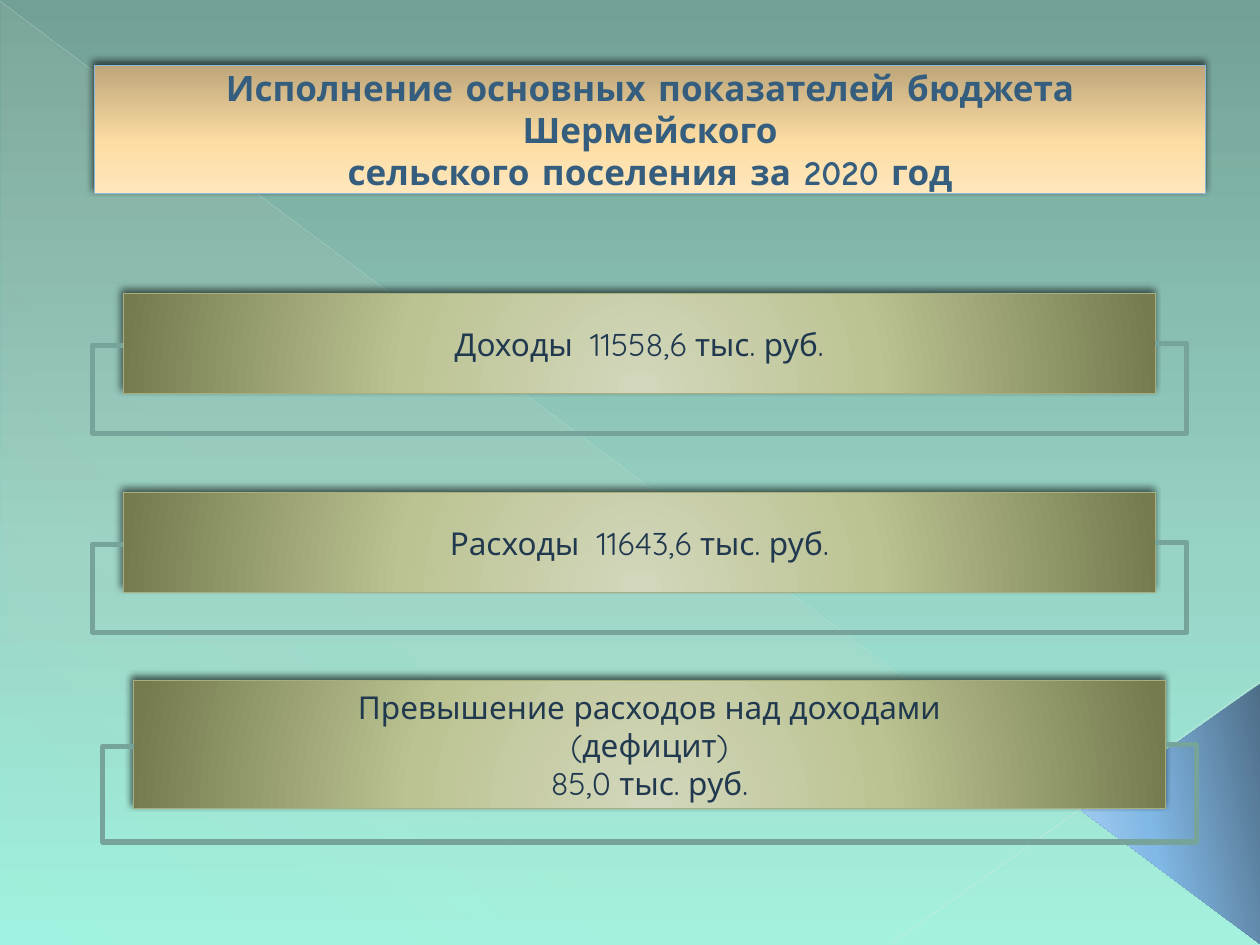
from lxml import etree
from pptx import Presentation
from pptx.dml.color import RGBColor
from pptx.enum import shapes, text
from pptx.oxml import ns
from pptx.util import Pt

COLORS = {
    "title": "355D7E", "title_line": "8EB7D8",
    "text": "21394F", "bar_line": "A8AF7D", "bracket": "76A49A",
    "ray": "D2EAE4", "short_ray": "D6ECE7", "shadow": "000000",
}
# Gradient stops: position %, colour, opacity %
GRADIENTS = {
    "background": [(0, "72A096", 100), (60, "98D4C6", 100), (100, "9EF3E0", 100)],
    "veil": [(0, "EBDDC3", 10), (70, "EBDDC3", 8), (100, "EBDDC3", 1)],
    "corner": [(0, "4E6D87", 100), (60, "81B8E5", 100), (100, "ABD0F3", 100)],
    "title": [(0, "BEA67B", 100), (60, "FCDDA3", 100), (100, "FFE7BD", 100)],
    "bar": [(0, "D3D7BC", 100), (46, "BCC392", 100), (100, "757B4E", 100)],
}
TITLE = ["Исполнение основных показателей бюджета Шермейского",
         "сельского поселения за 2020 год"]
# Box (left, top, width, height), drop of the bracket, lines of text
BARS = [
    ((70.5, 167.8, 589.7, 56.9), 50.7, ["Доходы  11558,6 тыс. руб."]),
    ((70.5, 281.5, 589.7, 56.9), 50.7, ["Расходы  11643,6 тыс. руб."]),
    ((76.3, 388.8, 589.7, 73.4), 55.1,
     ["Превышение расходов над доходами", "(дефицит)", "85,0 тыс. руб."]),
]


def child(parent, tag, **attrs):
    return etree.SubElement(parent, ns.qn(tag), {k: str(v) for k, v in attrs.items()})


def add_color(parent, color, opacity):
    clr = child(parent, "a:srgbClr", val=color)
    if opacity < 100:
        child(clr, "a:alpha", val=opacity * 1000)


def set_gradient(fill, element, name, angle=None):
    """Fill with a linear gradient, or a circular one when there is no angle."""
    fill.gradient()
    grad = element.find(".//" + ns.qn("a:gradFill"))
    for old in list(grad):
        grad.remove(old)
    stops = child(grad, "a:gsLst")
    for pos, color, opacity in GRADIENTS[name]:
        add_color(child(stops, "a:gs", pos=pos * 1000), color, opacity)
    if angle is None:
        circle = child(grad, "a:path", path="circle")
        child(circle, "a:fillToRect", l=50000, t=155000, r=50000, b=-55000)
    else:
        child(grad, "a:lin", ang=angle * 60000, scaled=0)


def set_line(sp, color, width):
    sp.line.color.rgb = RGBColor.from_string(COLORS[color])
    sp.line.width = Pt(width)


def add_shadow(sp):
    sp.shadow.inherit = False
    effects = sp._element.spPr.find(ns.qn("a:effectLst"))
    shadow = child(effects, "a:outerShdw", blurRad=Pt(4), dist=Pt(3),
                   dir=245 * 60000, algn="tl", rotWithShape=0)
    add_color(shadow, COLORS["shadow"], 60)


def write_lines(sp, lines, font, size, color, bold=False):
    tf = sp.text_frame
    tf.word_wrap = True
    tf.auto_size = text.MSO_AUTO_SIZE.NONE
    tf.vertical_anchor = text.MSO_ANCHOR.MIDDLE
    tf.text = "\n".join(lines)
    for p in tf.paragraphs:
        p.alignment = text.PP_ALIGN.CENTER
        p.font.name = font
        p.font.size = Pt(size)
        p.font.bold = bold
        p.font.color.rgb = RGBColor.from_string(COLORS[color])


def add_line(s, kind, points, color, width):
    cxn = s.shapes.add_connector(kind, *[Pt(v) for v in points])
    set_line(cxn, color, width)
    child(cxn._element.spPr, "a:effectLst")
    return cxn


def add_decor(s, width, height):
    """Background gradient, faint rays and the blue corner."""
    set_gradient(s.background.fill, s._element, "background", 90)

    veil = s.shapes.add_shape(shapes.MSO_SHAPE.RIGHT_TRIANGLE,
                              Pt(0.7), Pt(1.4), Pt(width - 1.4), Pt(height - 1.4))
    set_gradient(veil.fill, veil._element, "veil", 133)

    rays = [((0, 0.7, width - 0.7, height - 0.7), "ray", 0.39, 35),
            ((width, 389.5, 509, height - 0.7), "short_ray", 0.47, 45)]
    for points, color, weight, opacity in rays:
        ray = add_line(s, shapes.MSO_CONNECTOR.STRAIGHT, points, color, weight)
        clr = ray._element.spPr.find(".//" + ns.qn("a:srgbClr"))
        child(clr, "a:alpha", val=opacity * 1000)

    corner = s.shapes.add_shape(shapes.MSO_SHAPE.ISOSCELES_TRIANGLE,
                                Pt(594.7), Pt(414), Pt(149), Pt(102.2))
    corner.adjustments[0] = 0.513
    corner.rotation = 270
    set_gradient(corner.fill, corner._element, "corner", 258)
    for sp in (veil, corner):
        sp.line.fill.background()
        sp.shadow.inherit = False


def place_title(s, box):
    title = s.shapes.title
    title.left, title.top, title.width, title.height = [Pt(v) for v in box]
    set_gradient(title.fill, title._element, "title", 90)
    set_line(title, "title_line", 0.75)
    add_shadow(title)
    write_lines(title, TITLE, "Comic Neue", 20, "title", bold=True)
    s.shapes._spTree.append(title._element)  # in front of the decor


def add_bar(s, box, lines):
    bar = s.shapes.add_shape(shapes.MSO_SHAPE.RECTANGLE, *[Pt(v) for v in box])
    set_gradient(bar.fill, bar._element, "bar")
    set_line(bar, "bar_line", 0.75)
    add_shadow(bar)
    write_lines(bar, lines, "Quicksand", 18, "text")


def add_bracket(s, box, drop):
    """Five-part connector from the left side of the bar, below it, to the right."""
    left, top, width, height = box
    y = top + height / 2
    cxn = add_line(s, shapes.MSO_CONNECTOR.ELBOW,
                   (left + width, y, left, y + 1), "bracket", 3)
    spPr = cxn._element.spPr
    spPr.find(ns.qn("a:xfrm")).set("rot", str(180 * 60000))
    geom = spPr.find(ns.qn("a:prstGeom"))
    geom.set("prst", "bentConnector5")
    guides = geom.find(ns.qn("a:avLst"))
    if guides is None:
        guides = child(geom, "a:avLst")
    for i, ratio in enumerate((-0.03, -drop, 1.03), start=1):
        child(guides, "a:gd", name=f"adj{i}", fmla=f"val {round(ratio * 100000)}")


def main():
    prs = Presentation()
    prs.slide_width, prs.slide_height = Pt(720), Pt(540)
    s = prs.slides.add_slide(prs.slide_layouts[5])
    add_decor(s, 720, 540)
    place_title(s, (54, 37.4, 635, 73.4))
    for box, drop, lines in BARS:
        add_bar(s, box, lines)
        add_bracket(s, box, drop)
    prs.save("out.pptx")


if __name__ == "__main__":
    main()
